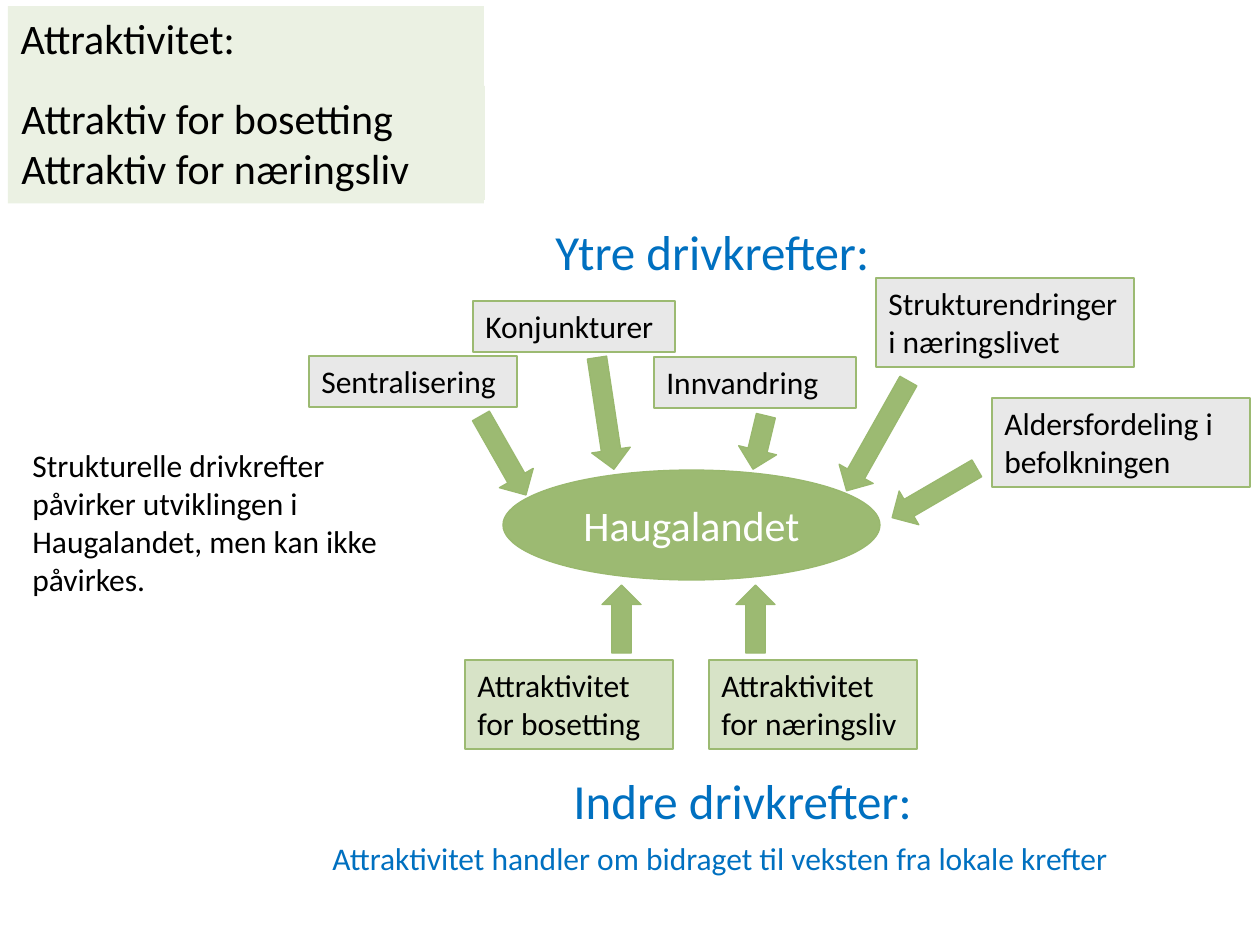
from dataclasses import dataclass

from pptx import Presentation
from pptx.dml.color import RGBColor
from pptx.enum.shapes import MSO_SHAPE
from pptx.enum.text import MSO_ANCHOR, MSO_AUTO_SIZE, PP_ALIGN
from pptx.util import Emu, Pt

RECTANGLE, OVAL, DOWN_ARROW = MSO_SHAPE.RECTANGLE, MSO_SHAPE.OVAL, MSO_SHAPE.DOWN_ARROW
TOP, MIDDLE = MSO_ANCHOR.TOP, MSO_ANCHOR.MIDDLE
LEFT, CENTER = PP_ALIGN.LEFT, PP_ALIGN.CENTER
GROW = MSO_AUTO_SIZE.SHAPE_TO_FIT_TEXT
PIXELS_PER_INCH = 126
ARROW_WIDTH = 39


@dataclass(frozen=True)
class Theme:
    font: str = "Calibri"
    body: int = 18
    large: int = 24
    heading: int = 28
    black: str = "000000"
    white: str = "FFFFFF"
    blue: str = "0070C0"
    green: str = "9CBA72"
    outline: str = "99B86E"
    header: str = "EBF1E3"
    outer: str = "E8E8E8"
    inner: str = "D7E3C7"
    line_width: float = 0.75


THEME = Theme()


def px(value):
    return Emu(round(value * 914400 / PIXELS_PER_INCH))


def place(box, left, top, width, height):
    """Turn a rectangle relative to a region's box into slide lengths."""
    return [px(value) for value in (box[0] + left, box[1] + top, width, height)]


def paint(shape, fill, line=None):
    shape.fill.solid()
    shape.fill.fore_color.rgb = RGBColor.from_string(fill)
    if line:
        shape.line.color.rgb = RGBColor.from_string(line)
        shape.line.width = Pt(THEME.line_width)
    else:
        shape.line.fill.background()


def write(shape, text, size=THEME.body, color=THEME.black, align=LEFT, anchor=TOP):
    frame = shape.text_frame
    frame.text = text
    frame.word_wrap = True
    frame.vertical_anchor = anchor
    for paragraph in frame.paragraphs:
        paragraph.alignment = align
        for run in paragraph.runs:
            run.font.name = THEME.font
            run.font.size = Pt(size)
            run.font.color.rgb = RGBColor.from_string(color)


def add_shape(slide, kind, position, fill, line=None):
    shape = slide.shapes.add_shape(kind, *position)
    shape.shadow.inherit = False
    paint(shape, fill, line)
    return shape


def add_label(slide, position, text, fill):
    label = add_shape(slide, RECTANGLE, position, fill, THEME.green)
    write(label, text)
    label.text_frame.auto_size = GROW


def add_text(slide, position, text, size=THEME.body, color=THEME.blue):
    text_box = slide.shapes.add_textbox(*position)
    write(text_box, text, size, color)
    text_box.text_frame.auto_size = GROW


def add_arrow(slide, position, rotation):
    arrow = add_shape(slide, DOWN_ARROW, position, THEME.green, THEME.outline)
    arrow.rotation = rotation


def add_header(slide, box):
    title = slide.shapes.title
    title.left, title.top, title.width, title.height = place(box, 0, 0, 476, 63)
    paint(title, THEME.header)
    write(title, "Attraktivitet:", THEME.large)
    aspects = add_shape(slide, RECTANGLE, place(box, 1, 80, 476, 114), THEME.header)
    write(aspects, "Attraktiv for bosetting\nAttraktiv for næringsliv", THEME.large)
    for shape in (title, aspects):
        shape.text_frame.auto_size = GROW


def add_region(slide, box):
    region = add_shape(slide, OVAL, place(box, 0, 0, 377, 110), THEME.green, THEME.outline)
    write(region, "Haugalandet", THEME.large, THEME.white, CENTER, MIDDLE)


def add_outer_forces(slide, box):
    add_text(slide, place(box, 234, 0, 367, 72), "Ytre drivkrefter:", THEME.heading)
    forces = [
        # text, label rectangle, arrow (left, top, length), rotation
        ("Sentralisering", (0, 141, 208, 51), (175, 195, 91), 330.3),
        ("Konjunkturer", (164, 86, 202, 51), (277, 142, 113), 351.4),
        ("Innvandring", (345, 142, 202, 51), (431, 200, 55), 13.5),
        ("Strukturendringer i næringslivet", (567, 63, 258, 89), (549, 158, 126), 29.4),
        ("Aldersfordeling i befolkningen", (683, 183, 258, 89), (606, 229, 98), 59.8),
    ]
    for text, label, (left, top, length), rotation in forces:
        add_label(slide, place(box, *label), text, THEME.outer)
        add_arrow(slide, place(box, left, top, ARROW_WIDTH, length), rotation)


def add_inner_forces(slide, box):
    for index, target in enumerate(("bosetting", "næringsliv")):
        add_label(slide, place(box, 145 + 244 * index, 75, 208, 89),
                  f"Attraktivitet for {target}", THEME.inner)
        add_arrow(slide, place(box, 282 + 134 * index, 0, ARROW_WIDTH, 68), 180)
    add_text(slide, place(box, 241, 179, 367, 72), "Indre drivkrefter:", THEME.heading)
    add_text(slide, place(box, 0, 248, 833, 50),
             "Attraktivitet handler om bidraget til veksten fra lokale krefter")


def add_comment(slide, box):
    add_text(slide, place(box, 0, 0, 387, 165),
             "Strukturelle drivkrefter påvirker utviklingen i Haugalandet, "
             "men kan ikke påvirkes.", color=THEME.black)


def main():
    presentation = Presentation()
    presentation.slide_width, presentation.slide_height = px(1260), px(945)
    slide = presentation.slides.add_slide(presentation.slide_layouts[5])
    add_header(slide, (8, 6))
    add_region(slide, (503, 470))
    add_comment(slide, (20, 440))
    add_outer_forces(slide, (309, 215))
    add_inner_forces(slide, (320, 585))
    presentation.save("out.pptx")


if __name__ == "__main__":
    main()
